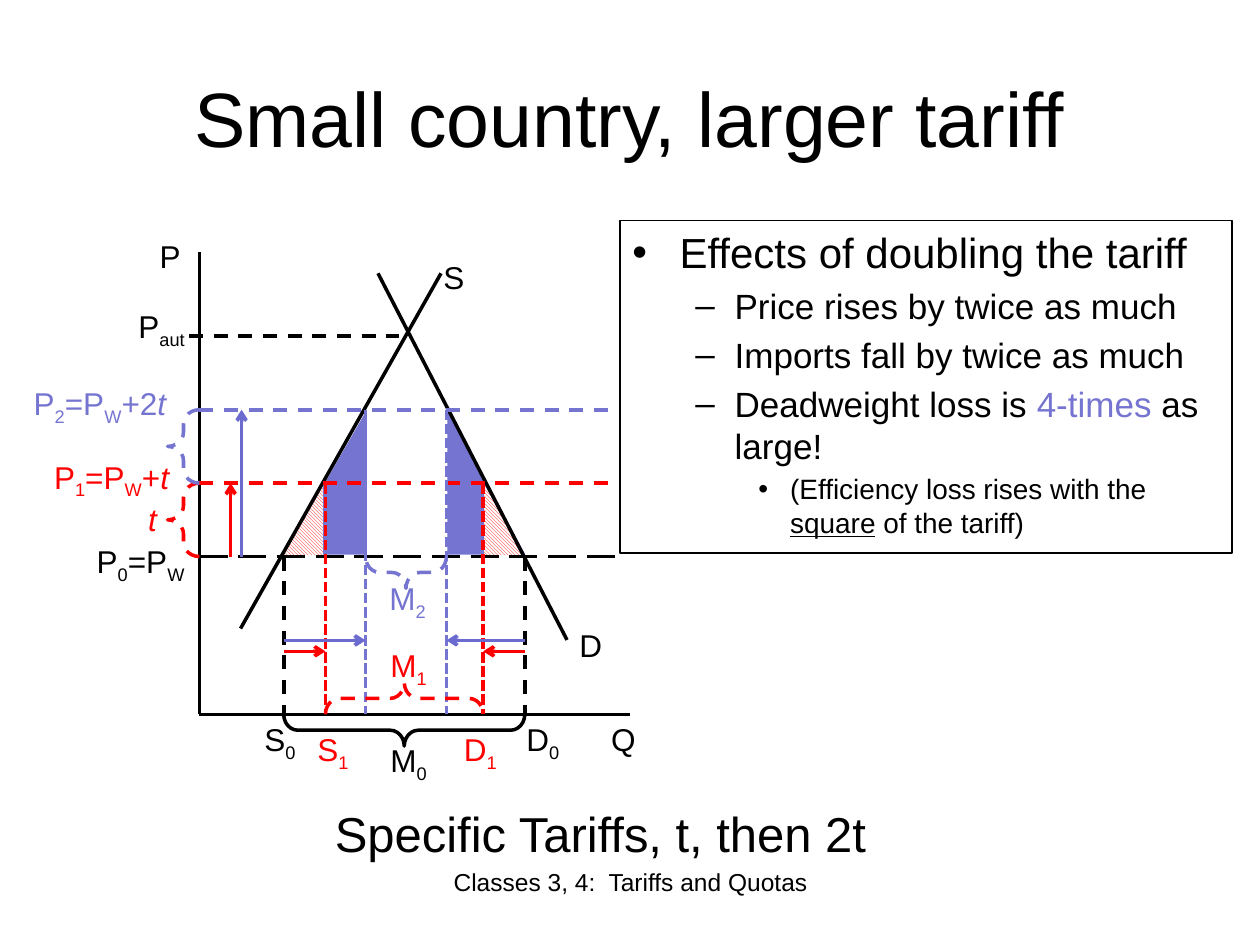
from dataclasses import dataclass

from lxml import etree
from pptx import Presentation
from pptx import util as u
from pptx.dml.color import RGBColor
from pptx.enum import dml, shapes, text
from pptx.oxml.ns import qn


@dataclass(frozen=True)
class Theme:
    font: str = "Arial"
    black: str = "000000"
    white: str = "FFFFFF"
    red: str = "FF0000"
    violet: str = "7575D1"
    arrow_violet: str = "6B6BCF"
    title: int = 44
    caption: int = 28
    label: int = 18
    footer: int = 14
    bullets: tuple = (24, 20, 16)
    stroke: float = 2
    border: float = 0.75


DASH = dml.MSO_LINE.DASH
LONG_DASH = dml.MSO_LINE.LONG_DASH
SHORT_DASH = dml.MSO_LINE.SQUARE_DOT
CENTER = text.PP_ALIGN.CENTER
LEFT = text.PP_ALIGN.LEFT
BRACE_DEPTH = 0.64
LABEL_HEIGHT = 1.02
BULLET_STYLES = (("•", 0.95, -0.95), ("–", 2.06, -0.79), ("•", 3.18, -0.64))


class TariffPage:
    def __init__(self, deck, theme):
        self.theme = theme
        self.page = deck.slides.add_slide(deck.slide_layouts[5])

    def span(self, para, words, size, color, italic=False, underline=False, sub=False):
        span = para.add_run()
        span.text = words
        font = span.font
        font.name, font.size = self.theme.font, u.Pt(size)
        font.color.rgb = RGBColor.from_string(color)
        if italic:
            font.italic = True
        if underline:
            font.underline = True
        if sub:
            span._r.get_or_add_rPr().set("baseline", "-25000")

    def stroke(self, line, color, width, dash=None):
        line.color.rgb = RGBColor.from_string(color)
        line.width = u.Pt(width)
        if dash:
            line.dash_style = dash

    def title(self, words, left, top, width, height):
        box = self.page.shapes.title
        box.left, box.top, box.width, box.height = map(u.Cm, (left, top, width, height))
        box.text_frame.vertical_anchor = text.MSO_ANCHOR.MIDDLE
        para = box.text_frame.paragraphs[0]
        para.alignment = CENTER
        self.span(para, words, self.theme.title, self.theme.black)

    def text_box(self, left, top, width, height, wrap=True, grow=True):
        box = self.page.shapes.add_textbox(*map(u.Cm, (left, top, width, height)))
        box.text_frame.word_wrap = wrap
        if grow:
            box.text_frame.auto_size = text.MSO_AUTO_SIZE.SHAPE_TO_FIT_TEXT
        return box

    def label(self, parts, left, top, width, color, align=LEFT):
        box = self.text_box(left, top, width, LABEL_HEIGHT)
        para = box.text_frame.paragraphs[0]
        para.alignment = align
        for part in parts.split("|"):
            self.span(para, part.strip("_/"), self.theme.label, color,
                      italic=part.startswith("/"), sub=part.startswith("_"))

    def caption(self, words, left, top, width, height, size, align=LEFT, wrap=True, grow=True):
        box = self.text_box(left, top, width, height, wrap, grow)
        para = box.text_frame.paragraphs[0]
        para.alignment = align
        self.span(para, words, size, self.theme.black)

    def line(self, start, end, color, dash=None, arrow=False):
        line = self.page.shapes.add_connector(
            shapes.MSO_CONNECTOR.STRAIGHT, *map(u.Cm, (*start, *end)))
        self.stroke(line.line, color, self.theme.stroke, dash)
        if arrow:
            etree.SubElement(line.line._get_or_add_ln(), qn("a:tailEnd"), type="arrow")
        etree.SubElement(line._element.spPr, qn("a:effectLst"))

    def triangle(self, left, top, width, height, mirrored, hatched):
        shape = self.page.shapes.add_shape(
            shapes.MSO_SHAPE.RIGHT_TRIANGLE, *map(u.Cm, (left, top, width, height)))
        shape.shadow.inherit = False
        shape.line.fill.background()
        if hatched:
            shape.fill.patterned()
            shape.fill.pattern = dml.MSO_PATTERN.DARK_DOWNWARD_DIAGONAL
            shape.fill.fore_color.rgb = RGBColor.from_string(self.theme.red)
            shape.fill.back_color.rgb = RGBColor.from_string(self.theme.white)
        else:
            shape.fill.solid()
            shape.fill.fore_color.rgb = RGBColor.from_string(self.theme.violet)
        if mirrored:
            shape._element.spPr.xfrm.set("flipH", "1")

    def brace(self, center_x, center_y, length, color, turn=0, dash=None):
        shape = self.page.shapes.add_shape(
            shapes.MSO_SHAPE.LEFT_BRACE, u.Cm(center_x - BRACE_DEPTH / 2),
            u.Cm(center_y - length / 2), u.Cm(BRACE_DEPTH), u.Cm(length))
        shape.adjustments[0] = 0.444
        shape.rotation = turn
        shape.shadow.inherit = False
        shape.fill.background()
        self.stroke(shape.line, color, self.theme.stroke, dash)

    def bullet_box(self, items, left, top, width, height):
        box = self.text_box(left, top, width, height, grow=False)
        self.stroke(box.line, self.theme.black, self.theme.border)
        frame = box.text_frame
        for index, (level, spans) in enumerate(items):
            para = frame.add_paragraph() if index else frame.paragraphs[0]
            size = self.theme.bullets[level]
            para.level = level
            para.space_before = u.Pt(size * 0.2)
            mark, margin, indent = BULLET_STYLES[level]
            props = para._p.get_or_add_pPr()
            props.set("marL", str(u.Cm(margin)))
            props.set("indent", str(u.Cm(indent)))
            etree.SubElement(props, qn("a:buFont"), typeface=self.theme.font)
            etree.SubElement(props, qn("a:buChar"), char=mark)
            for words, color, underline in spans:
                self.span(para, words, size, color, underline=underline)


def main():
    theme = Theme()
    black, red, violet = theme.black, theme.red, theme.violet
    deck = Presentation()
    deck.slide_width, deck.slide_height = u.Cm(25.4), u.Cm(19.05)
    page = TariffPage(deck, theme)

    axis_x, axis_y = 4.02, 14.4
    p0, p1, p2, p_aut = 11.22, 9.74, 8.26, 6.77
    s0, s1, s2 = 5.72, 6.56, 7.37
    d2, d1, d0 = 9.0, 9.74, 10.58
    middle = (s0 + d0) / 2

    for left, top, width, height, mirrored, hatched in (
            (9.02, p2, 1.57, 2.92, False, False), (s0, p2, 1.68, 2.92, True, False),
            (9.75, p1, 0.79, 1.45, False, True), (s0, p1, 0.79, 1.45, True, True)):
        page.triangle(left, top, width, height, mirrored, hatched)

    page.title("Small country, larger tariff", 1.27, 0.76, 22.86, 3.18)

    for start, end, color, dash in (
            ((axis_x, axis_y), (12.7, axis_y), black, None),
            ((axis_x, axis_y), (axis_x, 5.08), black, None),
            ((4.85, 12.67), (8.89, 5.51), black, None),
            ((11.43, 12.9), (7.62, 5.51), black, None),
            ((axis_x, p0), (12.5, p0), black, LONG_DASH),
            ((3.81, p_aut), (8.05, p_aut), black, DASH),
            ((axis_x, p1), (12.27, p1), red, DASH),
            ((axis_x, p2), (12.27, p2), violet, DASH)):
        page.line(start, end, color, dash)

    for x, top, color, dash in (
            (s0, p0, black, DASH), (d0, p0, black, DASH),
            (s1, p1, red, SHORT_DASH), (d1, p1, red, SHORT_DASH),
            (s2, p2, violet, SHORT_DASH), (d2, p2, violet, SHORT_DASH)):
        page.line((x, top), (x, axis_y), color, dash)

    half = BRACE_DEPTH / 2
    page.brace(middle, axis_y + half, d0 - s0, black, 270)
    page.brace(middle, axis_y - half, d1 - s1, red, 90, DASH)
    page.brace((s2 + d2) / 2, p0 + half, d2 - s2, violet, 270, DASH)
    page.brace(axis_x - half, (p0 + p1) / 2, p0 - p1, red, dash=DASH)
    page.brace(axis_x - half, (p1 + p2) / 2, p1 - p2, violet, dash=DASH)

    for parts, left, top, width, color in (
            ("P", 2.97, 4.65, 1.9, black), ("S", 8.69, 5.08, 1.9, black),
            ("P|_aut", 2.54, 6.07, 1.9, black), ("P|_0|=P|_W", 1.7, 10.8, 2.54, black),
            ("D", 11.43, 12.5, 1.07, black), ("Q", 12.07, axis_y, 1.9, black),
            ("S|_0", 5.08, axis_y, 1.27, black), ("D|_0", 10.36, axis_y, 1.27, black),
            ("S|_1", 6.15, 14.6, 1.27, red), ("D|_1", 9.1, 14.6, 1.27, red),
            ("M|_0", 7.62, 14.81, 1.75, black), ("M|_1", 7.62, 12.9, 1.45, red),
            ("M|_2", 7.6, 11.55, 1.55, violet),
            ("P|_1|=P|_W|+|/t", 0.84, 9.1, 3.18, red),
            ("P|_2|=P|_W|+2|/t", 0.43, 7.62, 3.6, violet)):
        page.label(parts, left, top, width, color)
    page.label("/t", 2.34, 9.95, 1.47, red, CENTER)

    page.bullet_box((
        (0, (("Effects of doubling the tariff", black, False),)),
        (1, (("Price rises by twice as much", black, False),)),
        (1, (("Imports fall by twice as much", black, False),)),
        (1, (("Deadweight loss is ", black, False), ("4-times ", violet, False),
             ("as large!", black, False))),
        (2, (("(Efficiency loss rises with the ", black, False), ("square", black, True),
             (" of the tariff)", black, False)))), 12.5, 4.45, 12.34, 6.7)

    for start, end, color in (
            ((4.65, p0), (4.65, p1), red), ((4.87, p0), (4.87, p2), theme.arrow_violet),
            ((s0, 13.13), (s1, 13.13), red), ((d0, 13.13), (d1, 13.13), red),
            ((s0, 12.91), (s2, 12.91), theme.arrow_violet),
            ((d0, 12.91), (d2, 12.91), theme.arrow_violet)):
        page.line(start, end, color, arrow=True)

    page.caption("Specific Tariffs, t, then 2t", 6.5, 16.08, 11.35, 1.45,
                 theme.caption, wrap=False)
    page.caption("Classes 3, 4:  Tariffs and Quotas", 8.69, 17.35, 8.05, 1.32,
                 theme.footer, CENTER, grow=False)
    deck.save("out.pptx")


if __name__ == "__main__":
    main()
